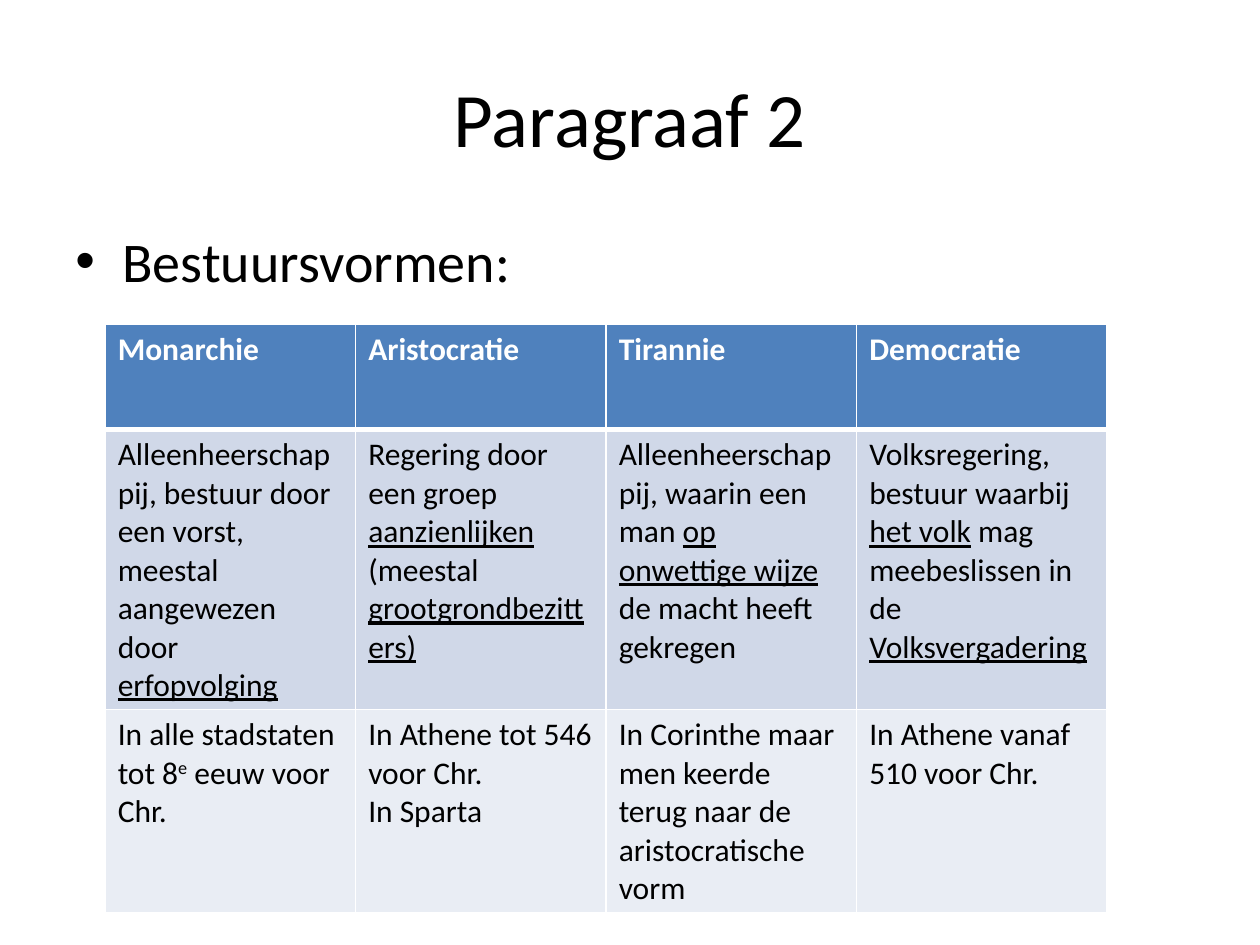
from lxml import etree
from pptx import Presentation
from pptx.dml.color import RGBColor
from pptx.enum.text import MSO_ANCHOR, PP_ALIGN
from pptx.oxml.ns import qn
from pptx.util import Cm, Pt

CENTER, LEFT = PP_ALIGN.CENTER, PP_ALIGN.LEFT
MIDDLE, TOP = MSO_ANCHOR.MIDDLE, MSO_ANCHOR.TOP
FONT = "Calibri"
COLORS = {"text": "000000", "white": "FFFFFF", "header": "4F81BD",
          "definition": "D0D8E8", "example": "E9EDF4"}

TITLE = "Paragraaf 2"
HEADING = "Bestuursvormen:"
UNDERLINE, SUPERSCRIPT = "underline", "superscript"

# Each cell is a list of paragraphs; each paragraph is a list of (text, style) runs.
ROWS = [
    ("header", 2.13, [
        [[("Monarchie", None)]],
        [[("Aristocratie", None)]],
        [[("Tirannie", None)]],
        [[("Democratie", None)]],
    ]),
    ("definition", 5.64, [
        [[("Alleenheerschappij, bestuur door een vorst, meestal aangewezen door ", None),
          ("erfopvolging", UNDERLINE)]],
        [[("Regering door een groep ", None), ("aanzienlijken ", UNDERLINE),
          ("(meestal ", None), ("grootgrondbezitters)", UNDERLINE)]],
        [[("Alleenheerschappij, waarin een man ", None),
          ("op onwettige wijze ", UNDERLINE), ("de macht heeft gekregen", None)]],
        [[("Volksregering, bestuur waarbij ", None), ("het volk", UNDERLINE),
          (" mag meebeslissen in de ", None), ("Volksvergadering", UNDERLINE)]],
    ]),
    ("example", 4.09, [
        [[("In alle stadstaten tot 8", None), ("e", SUPERSCRIPT),
          (" eeuw voor Chr.", None)]],
        [[("In Athene tot 546 voor Chr.", None)], [("In Sparta", None)]],
        [[("In Corinthe maar men keerde terug naar de aristocratische vorm", None)]],
        [[("In Athene vanaf 510 voor Chr.", None)]],
    ]),
]
TABLE_LEFT, TABLE_TOP, COLUMN_WIDTH = 2.12, 6.53, 5.05


def add_run(paragraph, text, size, color="text", bold=False, style=None):
    run = paragraph.add_run()
    run.text = text
    run.font.name = FONT
    run.font.size = Pt(size)
    run.font.bold = bold
    run.font.color.rgb = RGBColor.from_string(COLORS[color])
    if style == UNDERLINE:
        run.font.underline = True
    elif style == SUPERSCRIPT:
        run._r.get_or_add_rPr().set("baseline", "30000")


def add_text_box(slide, top, height, anchor, alignment):
    frame = slide.shapes.add_textbox(Cm(1.27), Cm(top), Cm(22.86), Cm(height)).text_frame
    frame.word_wrap = True
    frame.vertical_anchor = anchor
    frame.paragraphs[0].alignment = alignment
    return frame.paragraphs[0]


def add_bullet(paragraph):
    properties = paragraph._p.get_or_add_pPr()
    properties.set("marL", str(Cm(0.95)))
    properties.set("indent", str(-Cm(0.95)))
    etree.SubElement(properties, qn("a:buFont"), typeface="Arial")
    etree.SubElement(properties, qn("a:buChar"), char="•")


def style_cell(cell, kind):
    properties = cell._tc.get_or_add_tcPr()
    for side in ("L", "R", "T", "B"):
        heavy = (kind, side) in (("header", "B"), ("definition", "T"))
        line = etree.SubElement(properties, qn(f"a:ln{side}"), w=str(Pt(3 if heavy else 1)))
        fill = etree.SubElement(line, qn("a:solidFill"))
        etree.SubElement(fill, qn("a:srgbClr"), val=COLORS["white"])
    cell.fill.solid()
    cell.fill.fore_color.rgb = RGBColor.from_string(COLORS[kind])


def fill_cell(cell, paragraphs, kind):
    header = kind == "header"
    frame = cell.text_frame
    for index, runs in enumerate(paragraphs):
        paragraph = frame.add_paragraph() if index else frame.paragraphs[0]
        for text, style in runs:
            add_run(paragraph, text, 18, "white" if header else "text", header, style)


def add_government_table(slide):
    column_count = len(ROWS[0][2])
    height = sum(row_height for _, row_height, _ in ROWS)
    table = slide.shapes.add_table(
        len(ROWS), column_count, Cm(TABLE_LEFT), Cm(TABLE_TOP),
        Cm(COLUMN_WIDTH * column_count), Cm(height)).table
    for column in table.columns:
        column.width = Cm(COLUMN_WIDTH)
    for row, (kind, row_height, cells) in zip(table.rows, ROWS):
        row.height = Cm(row_height)
        for cell, paragraphs in zip(row.cells, cells):
            style_cell(cell, kind)
            fill_cell(cell, paragraphs, kind)


def main():
    presentation = Presentation()
    presentation.slide_width, presentation.slide_height = Cm(25.4), Cm(19.05)
    slide = presentation.slides.add_slide(presentation.slide_layouts[6])
    add_run(add_text_box(slide, 0.76, 3.18, MIDDLE, CENTER), TITLE, 44)
    heading = add_text_box(slide, 4.45, 12.57, TOP, LEFT)
    add_bullet(heading)
    add_run(heading, HEADING, 32)
    add_government_table(slide)
    presentation.save("out.pptx")


if __name__ == "__main__":
    main()
